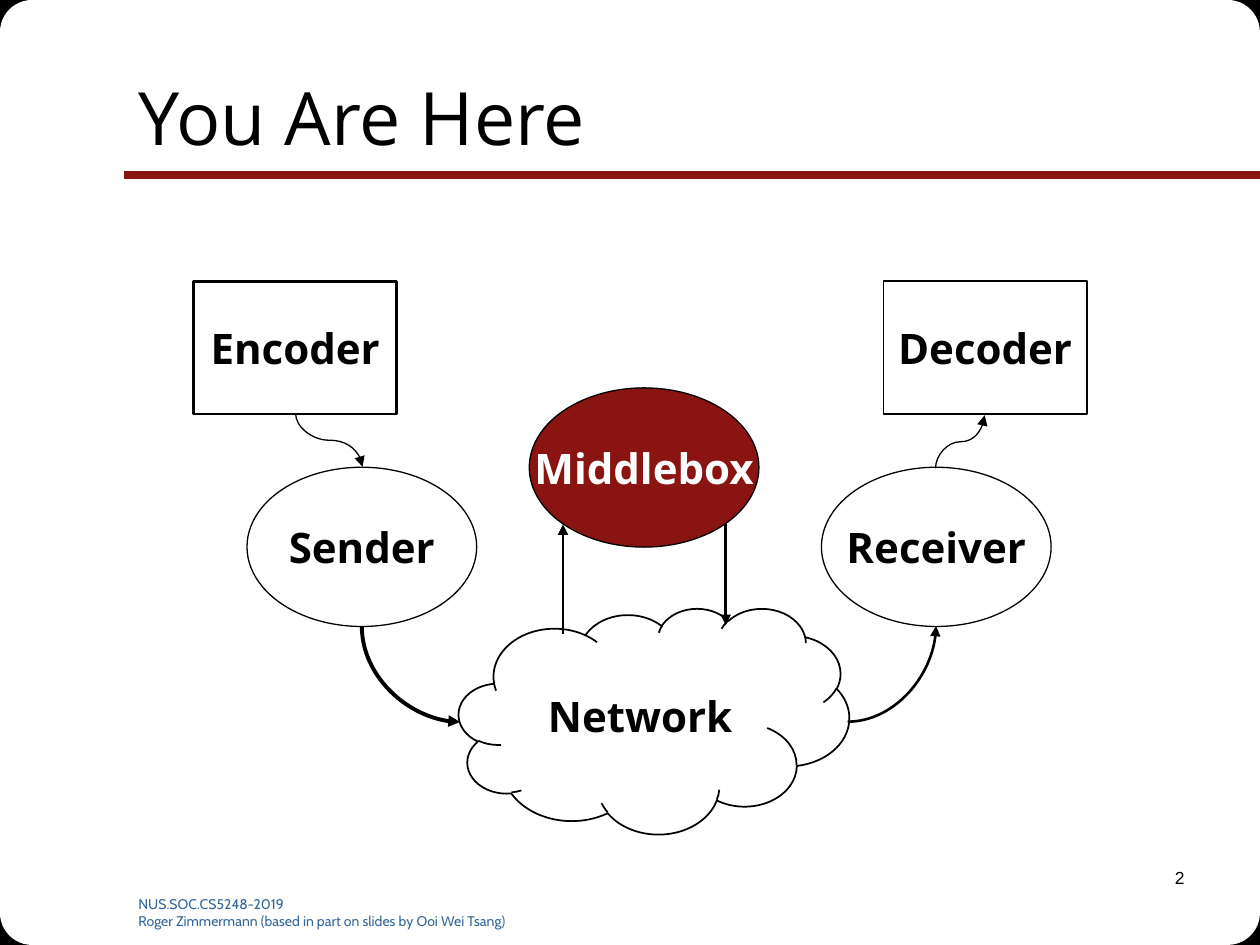
import pptx
import pptx.util
import pptx.dml.color
import pptx.enum.shapes
import pptx.enum.text
import pptx.oxml.ns
from lxml import etree

Cm, Pt = pptx.util.Cm, pptx.util.Pt
RGB = pptx.dml.color.RGBColor.from_string
Preset = pptx.enum.shapes.MSO_SHAPE
Route = pptx.enum.shapes.MSO_CONNECTOR
Align = pptx.enum.text.PP_ALIGN
Anchor = pptx.enum.text.MSO_ANCHOR
qn = pptx.oxml.ns.qn

THEME = {
    "ink": RGB("000000"),
    "paper": RGB("FFFFFF"),
    "accent": RGB("891411"),
    "credit": RGB("336699"),
    "title": {"name": "Open Sans", "size": Pt(42), "bold": False},
    "label": {"name": "Open Sans", "size": Pt(24), "bold": True},
    "footer": {"name": "Cabin", "size": Pt(8), "bold": False},
    "number": {"name": "Arial", "size": Pt(10), "bold": False},
}


def write(owner, text, style, color, align, anchor, wrap):
    frame = owner.text_frame
    frame.text = text
    for key, value in {"word_wrap": wrap, "vertical_anchor": anchor}.items():
        setattr(frame, key, value)
    for paragraph in frame.paragraphs:
        paragraph.alignment = align
        for key, value in THEME[style].items():
            setattr(paragraph.font, key, value)
        paragraph.font.color.rgb = THEME[color]


def draw(preset, left, top, width, height, fill, line_width):
    part = slide.shapes.add_shape(preset, Cm(left), Cm(top), Cm(width), Cm(height))
    part.shadow.inherit = False
    if fill:
        part.fill.solid()
        part.fill.fore_color.rgb = THEME[fill]
    else:
        part.fill.background()
    if line_width:
        part.line.color.rgb = THEME["ink"]
        part.line.width = Pt(line_width)
    else:
        part.line.fill.background()
    return part


deck = pptx.Presentation()
page_width, page_height = 25.4, 19.05
deck.slide_width, deck.slide_height = Cm(page_width), Cm(page_height)
slide = deck.slides.add_slide(deck.slide_layouts[5])

for preset, side, fill, line_width in (
    (Preset.RECTANGLE, 1.09, "ink", 0.75),
    (Preset.ROUNDED_RECTANGLE, 3.89, "paper", 0),
):
    for left in (0, page_width - side):
        for top in (0, page_height - side):
            draw(preset, left, top, side, side, fill, line_width)

heading = slide.shapes.title
slide.shapes._spTree.append(heading._element)
for key, value in {"left": 2.54, "top": 0.76, "width": 21.59, "height": 3.18}.items():
    setattr(heading, key, Cm(value))
write(heading, "You Are Here", "title", "ink", Align.LEFT, Anchor.MIDDLE, True)

credits = "NUS.SOC.CS5248-2019\nRoger Zimmermann (based in part on slides by Ooi Wei Tsang)"
for text, left, top, width, height, style, color, align in (
    (credits, 2.54, 17.93, 9.32, 0.71, "footer", "credit", Align.LEFT),
    ("2", 18.85, 17.35, 5.28, 1.27, "number", "ink", Align.RIGHT),
):
    note = slide.shapes.add_textbox(Cm(left), Cm(top), Cm(width), Cm(height))
    write(note, text, style, color, align, Anchor.TOP, True)

box, oval = (4.1, 2.68), (4.63, 3.21)
for label, preset, left, top, size, fill, color, line_width in (
    ("Network", Preset.CLOUD, 9.25, 12.26, (7.87, 4.55), "paper", "ink", 1),
    ("Encoder", Preset.RECTANGLE, 3.9, 5.67, box, "paper", "ink", 1.5),
    ("Sender", Preset.OVAL, 4.98, 9.42, oval, "paper", "ink", 0.75),
    ("Middlebox", Preset.OVAL, 10.67, 7.82, oval, "accent", "paper", 0.75),
    ("Receiver", Preset.OVAL, 16.56, 9.42, oval, None, "ink", 0.75),
    ("Decoder", Preset.RECTANGLE, 17.81, 5.67, box, "paper", "ink", 1),
):
    stage = draw(preset, left, top, *size, fill, line_width)
    write(stage, label, "label", color, Align.CENTER, Anchor.MIDDLE, preset == Preset.CLOUD)

for route, geometry, begin, end, turn, color, line_width, arrow in (
    (Route.STRAIGHT, "line", (25.4, 3.53), (2.49, 3.53), 0, "accent", 4.5, False),
    (Route.CURVE, "curvedConnector3", (7.17, 8.2), (6.1, 9.55), 270, "ink", 0.75, True),
    (Route.CURVE, "curvedConnector2", (9.25, 12.6), (7.32, 14.58), 270, "ink", 2.25, True),
    (Route.STRAIGHT, "line", (11.35, 12.78), (11.35, 10.57), 0, "ink", 1.5, True),
    (Route.STRAIGHT, "line", (14.63, 10.57), (14.63, 12.6), 0, "ink", 1.5, True),
    (Route.CURVE, "curvedConnector2", (17.09, 14.55), (18.87, 12.62), 0, "ink", 1.5, True),
    (Route.CURVE, "curvedConnector3", (18.82, 8.41), (19.89, 9.4), 270, "ink", 0.75, True),
):
    flow = slide.shapes.add_connector(route, *map(Cm, begin + end))
    flow.line.color.rgb = THEME[color]
    flow.line.width = Pt(line_width)
    properties = flow._element.spPr
    properties.find(qn("a:prstGeom")).set("prst", geometry)
    if turn:
        properties.find(qn("a:xfrm")).set("rot", str(turn * 60000))
    if arrow:
        etree.SubElement(properties.find(qn("a:ln")), qn("a:tailEnd"), type="triangle")
    etree.SubElement(properties, qn("a:effectLst"))

deck.save("out.pptx")
